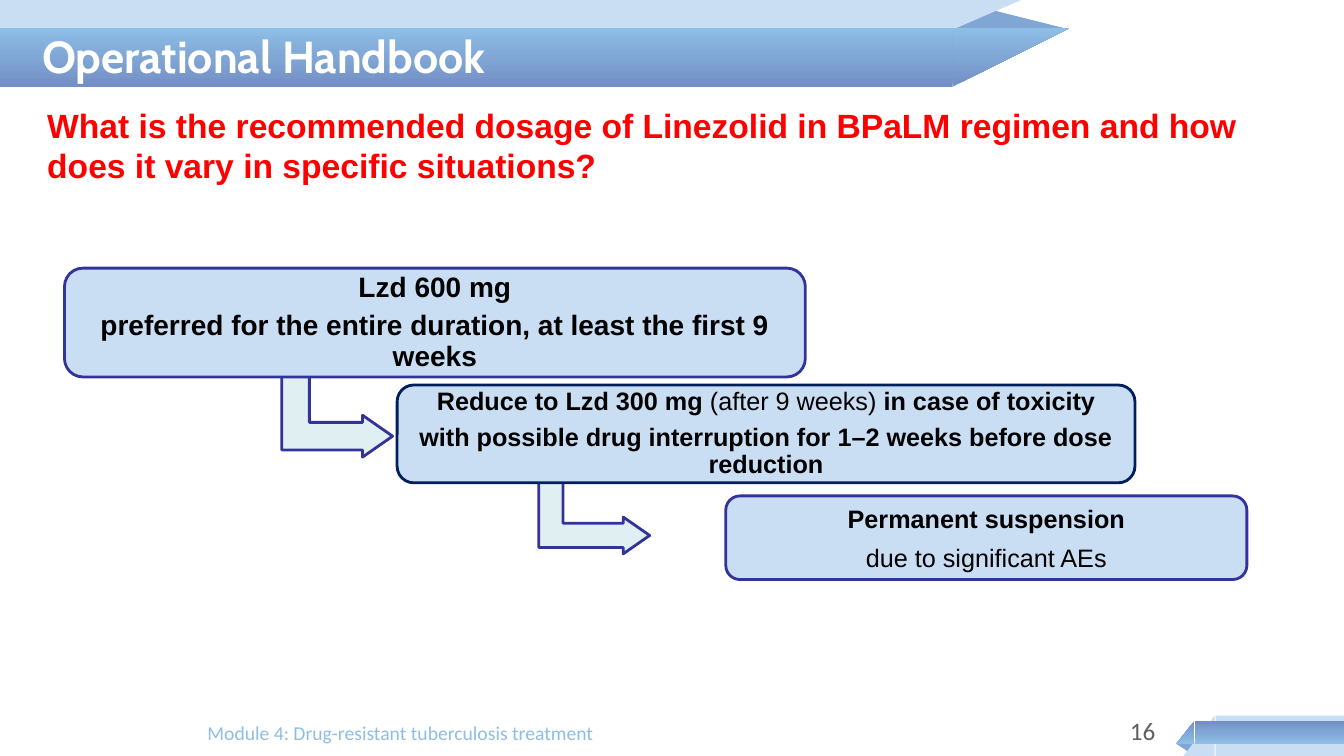
"""Builds the Operational Handbook slide on Linezolid dosage in the BPaLM regimen."""
from lxml import etree
from pptx import Presentation
from pptx import util as u
from pptx.dml.color import RGBColor
from pptx.enum import shapes, text
from pptx.oxml import parse_xml
from pptx.oxml.ns import nsdecls, qn

THEME = {
    "pale": "C9DDF3", "fold": "80A6D5", "sky": "8DBEE6", "mint": "E0F0F2",
    "indigo": "333399", "navy": "00205C", "white": "FFFFFF", "black": "000000",
    "red": "FF0000", "grey": "606060",
    "ribbon": ("738EC5", "80A6D5", "8DBEE6"),
    "title": 32, "question": 24, "lead": 20, "body": 18, "footer": 14,
    "heading_font": "Cabin", "body_font": "Arial", "footer_font": "Calibri",
}
KIND = shapes.MSO_SHAPE
LEFT, CENTER, RIGHT = text.PP_ALIGN.LEFT, text.PP_ALIGN.CENTER, text.PP_ALIGN.RIGHT
TOP, MIDDLE = text.MSO_ANCHOR.TOP, text.MSO_ANCHOR.MIDDLE

deck = Presentation()
deck.slide_width, deck.slide_height = u.Inches(13.33), u.Inches(7.5)
slide = deck.slides.add_slide(deck.slide_layouts[6])
COLUMN, ROW = deck.slide_width / 160, deck.slide_height / 90


def draw(kind, cells, fill, line=None, adjust=(), turn=0, flips=()):
    """Draw a preset shape on the 160 by 90 grid."""
    x, y, w, h = cells
    part = slide.shapes.add_shape(kind, round(x * COLUMN), round(y * ROW), round(w * COLUMN), round(h * ROW))
    part.shadow.inherit = False
    part.rotation = turn
    for index, value in enumerate(adjust):
        part.adjustments[index] = value
    frame = part._element.spPr.find(qn("a:xfrm"))
    for flip in flips:
        frame.set(flip, "1")
    if fill == "ribbon":
        gradient = parse_xml(f'<a:gradFill {nsdecls("a")} rotWithShape="1"><a:gsLst/><a:lin ang="5400000" scaled="0"/></a:gradFill>')
        for index, color in enumerate(THEME[fill]):
            stop = etree.SubElement(gradient[0], qn("a:gs"), pos=str(index * 50000))
            etree.SubElement(stop, qn("a:srgbClr"), val=color)
        part._element.spPr.find(qn("a:prstGeom")).addnext(gradient)
    else:
        part.fill.solid()
        part.fill.fore_color.rgb = RGBColor.from_string(THEME[fill])
    if line:
        part.line.color.rgb = RGBColor.from_string(THEME[line])
        part.line.width = u.Pt(2)
    else:
        part.line.fill.background()
    return part


def write(holder, paragraphs, size, font, color, align=LEFT, anchor=TOP, spacing=None, after=0):
    """Fill a text frame with paragraphs made of (wording, bold) runs."""
    frame = holder.text_frame
    frame.word_wrap = True
    frame.vertical_anchor = anchor
    for index, runs in enumerate(paragraphs):
        paragraph = frame.paragraphs[0] if index == 0 else frame.add_paragraph()
        paragraph.alignment = align
        paragraph.line_spacing = spacing
        paragraph.space_after = u.Pt(after)
        for wording, bold in runs:
            run = paragraph.add_run()
            run.text = wording
            run.font.bold = bold
            run.font.size = u.Pt(THEME[size])
            run.font.name = THEME[font]
            run.font.color.rgb = RGBColor.from_string(THEME[color])


ribbons = [
    ((113.16, 1.08, 14.04, 2.4), (), "flipH", [
        (KIND.RECTANGLE, (0, 0, 97.8, 10.32), "pale"),
        (KIND.RIGHT_TRIANGLE, (97.68, 0, 23.88, 10.32), "pale"),
        (KIND.RECTANGLE, (0, 3.36, 113.4, 6.96), "ribbon"),
        (KIND.RIGHT_TRIANGLE, (113.4, 3.36, 13.92, 6.96), "ribbon"),
    ]),
    ((140.04, 88.56, 2.16, 0.96), ("flipH", "flipV"), "flipV", [
        (KIND.RECTANGLE, (144.72, 85.2, 15.28, 4.8), "pale"),
        (KIND.RIGHT_TRIANGLE, (140.88, 85.2, 3.72, 4.8), "pale"),
        (KIND.RECTANGLE, (142.2, 85.8, 17.8, 2.76), "ribbon"),
        (KIND.RIGHT_TRIANGLE, (140.04, 85.8, 2.16, 2.76), "ribbon"),
    ]),
]
for fold, fold_flips, band_flip, bands in ribbons:
    draw(KIND.ISOSCELES_TRIANGLE, fold, "fold", adjust=(0.32,), flips=fold_flips)
    for kind, cells, fill in bands:
        draw(kind, cells, fill, turn=180, flips=(band_flip,))

question = "What is the recommended dosage of Linezolid in BPaLM regimen and how does it vary in specific situations?"
captions = [
    ((23.52, 85.2, 96.24, 4.8), "Module 4: Drug-resistant tuberculosis treatment", False,
     "footer", "footer_font", "sky", LEFT, TOP),
    ((3.84, 1.32, 96.24, 10.68), "Operational Handbook", True, "title", "heading_font", "white", LEFT, MIDDLE),
    ((4.44, 11.88, 152.16, 9), question, True, "question", "body_font", "red", LEFT, TOP),
    ((121.56, 84.6, 17.16, 4.8), "16", False, "body", "footer_font", "grey", RIGHT, TOP),
]
for (x, y, w, h), wording, bold, *style in captions:
    caption = slide.shapes.add_textbox(round(x * COLUMN), round(y * ROW), round(w * COLUMN), round(h * ROW))
    write(caption, [[(wording, bold)]], *style)

dosage_steps = [
    ((7.68, 31.92, 88.2, 12.96), "indigo", "lead", 0.9, (35.16, 42.84, 9.96, 13.2), [
        [("Lzd 600 mg", True)],
        [("preferred for the entire duration, at least the first 9 weeks", True)],
    ]),
    ((47.28, 45.84, 87.84, 11.64), "navy", "body", 0.9, (66.36, 54.96, 8.76, 13.2), [
        [("Reduce to Lzd 300 mg", True), (" (after 9 weeks) ", False), ("in case of toxicity", True)],
        [("with possible drug interruption for 1–2 weeks before dose reduction", True)],
    ]),
    ((86.4, 59.04, 62.04, 9.96), "indigo", "body", 1.0, None, [
        [("Permanent suspension", True)],
        [("due to significant AEs", False)],
    ]),
]
for cells, outline, size, spacing, arrow, paragraphs in dosage_steps:
    if arrow:
        draw(KIND.BENT_UP_ARROW, arrow, "mint", "indigo", adjust=(0.33, 0.25, 0.36), turn=90)
    step = draw(KIND.ROUNDED_RECTANGLE, cells, "pale", outline, adjust=(0.17,))
    frame = step.text_frame
    frame.margin_left = frame.margin_right = frame.margin_top = frame.margin_bottom = u.Inches(0.08)
    write(step, paragraphs, size, "body_font", "black", CENTER, MIDDLE, spacing, 6)

deck.save("out.pptx")
